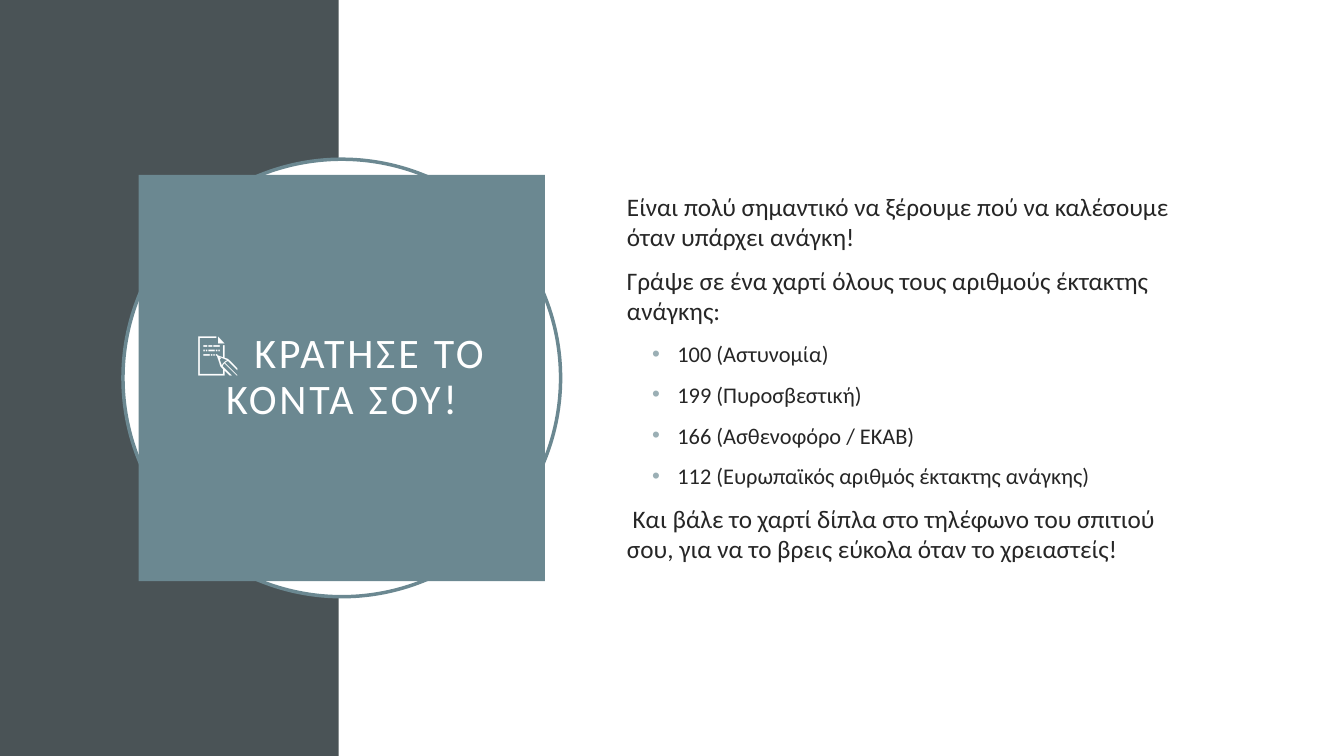
from lxml import etree
from pptx import Presentation
from pptx.dml.color import RGBColor
from pptx.enum import shapes, text
from pptx.oxml.ns import qn
from pptx.util import Inches, Pt

# Content
TITLE = "📝 ΚΡΑΤΗΣΕ ΤΟ ΚΟΝΤΑ ΣΟΥ!"
BODY = [  # (level, text)
    (0, "Είναι πολύ σημαντικό να ξέρουμε πού να καλέσουμε όταν υπάρχει ανάγκη!"),
    (0, "Γράψε σε ένα χαρτί όλους τους αριθμούς έκτακτης ανάγκης:"),
    (1, "100 (Αστυνομία)"),
    (1, "199 (Πυροσβεστική)"),
    (1, "166 (Ασθενοφόρο / ΕΚΑΒ)"),
    (1, "112 (Ευρωπαϊκός αριθμός έκτακτης ανάγκης)"),
    (0, " Και βάλε το χαρτί δίπλα στο τηλέφωνο του σπιτιού σου, "
        "για να το βρεις εύκολα όταν το χρειαστείς!"),
]
COLORS = {"dark": "4A5356", "white": "FFFFFF", "teal": "6B8891",
          "text": "262626", "bullet": "9BAFB5"}
FONT = "Calibri"
SIZES = {0: 18, 1: 16}
WIDTH, HEIGHT, BAND = 13.33, 7.5, 3.36
CENTER_X, CENTER_Y = 3.39, 3.75
RING, SQUARE = 4.34, 4.03


def color(name):
    return RGBColor.from_string(COLORS[name])


def centered(side):
    """Box of a square of this side around the badge centre."""
    return [Inches(v) for v in (CENTER_X - side / 2, CENTER_Y - side / 2, side, side)]


def add_filled(s, kind, box, fill, line=None):
    sp = s.shapes.add_shape(kind, *box)
    sp.shadow.inherit = False
    sp.fill.solid()
    sp.fill.fore_color.rgb = color(fill)
    if line:
        sp.line.color.rgb = color(line)
        sp.line.width = Pt(2.5)
    else:
        sp.line.fill.background()
    return sp


def set_font(font, size, name):
    font.name = FONT
    font.size = Pt(size)
    font.color.rgb = color(name)


def add_bullet(p):
    pPr = p._p.get_or_add_pPr()
    pPr.set("marL", str(Inches(0.5)))
    pPr.set("indent", str(Inches(-0.25)))
    clr = etree.SubElement(pPr, qn("a:buClr"))
    etree.SubElement(clr, qn("a:srgbClr"), val=COLORS["bullet"])
    etree.SubElement(pPr, qn("a:buFont"), typeface="Arial")
    etree.SubElement(pPr, qn("a:buChar"), char="•")


prs = Presentation()
prs.slide_width, prs.slide_height = Inches(WIDTH), Inches(HEIGHT)
s = prs.slides.add_slide(prs.slide_layouts[5])

# Side band and ring
add_filled(s, shapes.MSO_SHAPE.RECTANGLE, (0, 0, Inches(BAND), Inches(HEIGHT)), "dark")
add_filled(s, shapes.MSO_SHAPE.OVAL, centered(RING), "white", "teal")

# Title square, brought in front of the ring
title = s.shapes.title
s.shapes._spTree.append(title._element)
title.left, title.top, title.width, title.height = centered(SQUARE)
title.fill.solid()
title.fill.fore_color.rgb = color("teal")
tf = title.text_frame
tf.text = TITLE
tf.word_wrap = True
tf.auto_size = text.MSO_AUTO_SIZE.NONE
tf.vertical_anchor = text.MSO_ANCHOR.MIDDLE
tf.margin_left = tf.margin_right = tf.margin_top = tf.margin_bottom = Inches(0.2)
p = tf.paragraphs[0]
p.alignment = text.PP_ALIGN.CENTER
p.line_spacing = 0.9
r = p.runs[0]
set_font(r.font, 30, "white")
r.font._element.set("spc", "200")

# Advice and emergency numbers
tf = s.shapes.add_textbox(Inches(6.12), Inches(1.53), Inches(5.82), Inches(4.43)).text_frame
tf.word_wrap = True
tf.vertical_anchor = text.MSO_ANCHOR.MIDDLE
for i, (level, line) in enumerate(BODY):
    p = tf.add_paragraph() if i else tf.paragraphs[0]
    p.text = line
    p.level = level
    p.space_before = Pt(10 if i else 0)
    if level:
        add_bullet(p)
    set_font(p.runs[0].font, SIZES[level], "text")

prs.save("out.pptx")
